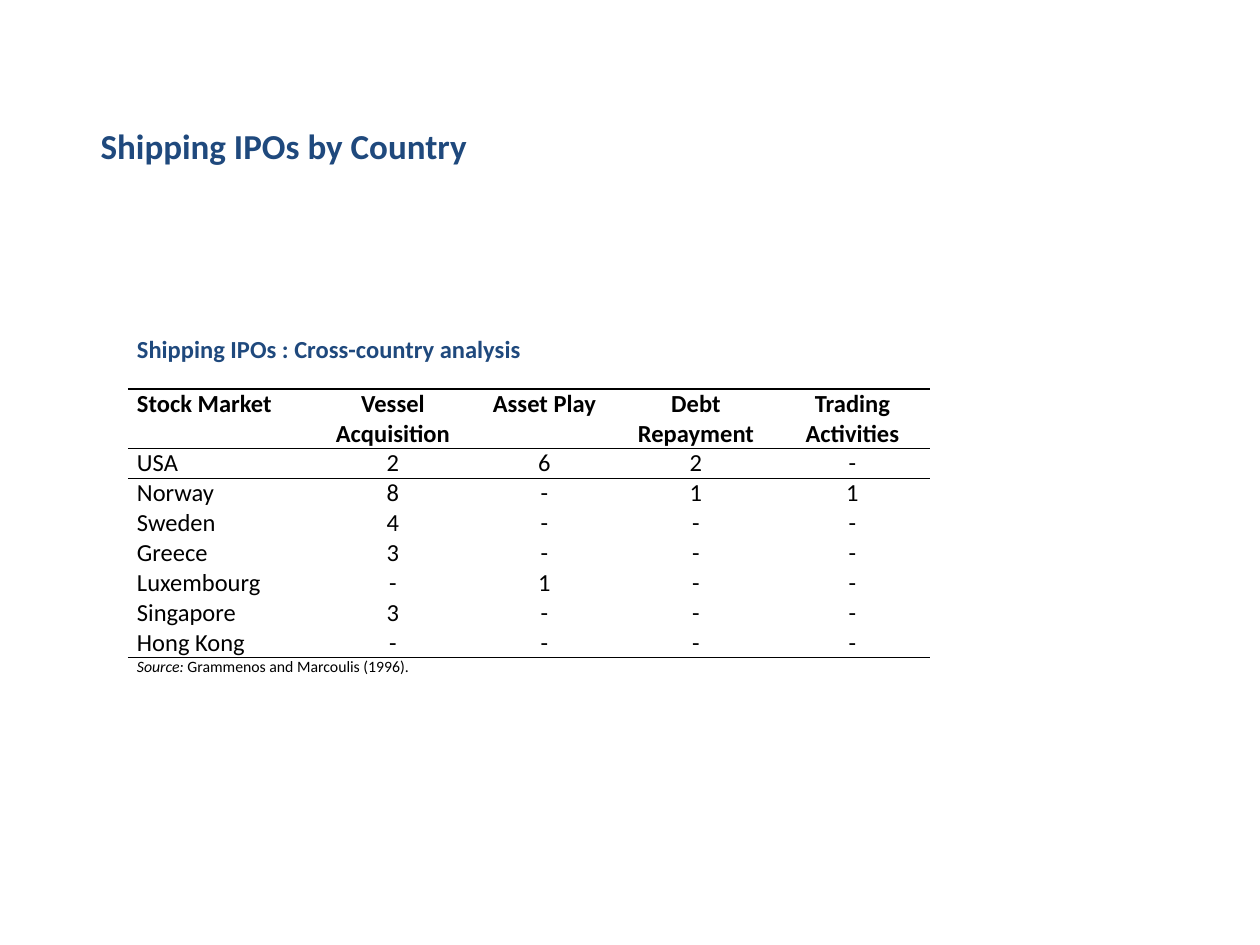
from lxml.etree import SubElement
from pptx import Presentation
from pptx.dml.color import RGBColor
from pptx.enum.text import MSO_ANCHOR, PP_ALIGN as Align
from pptx.oxml.ns import qn
from pptx.util import Pt

EMU_PER_PX = 914400 / 126
FONT = "Calibri"
COLORS = {"navy": "1F497D", "black": "000000"}
NO_STYLE = "{2D5ABB26-0587-4C30-8999-92F81FD0307C}"

TITLE = "Shipping IPOs by Country"
CAPTION = "Shipping IPOs : Cross-country analysis"
HEADERS = ["Stock Market", "Vessel\nAcquisition", "Asset Play", "Debt Repayment", "Trading Activities"]
MARKETS = [
    ["USA", "2", "6", "2", "-"],
    ["Norway", "8", "-", "1", "1"],
    ["Sweden", "4", "-", "-", "-"],
    ["Greece", "3", "-", "-", "-"],
    ["Luxembourg", "-", "1", "-", "-"],
    ["Singapore", "3", "-", "-", "-"],
    ["Hong Kong", "-", "-", "-", "-"],
]
SOURCE = ["Source: ", "Grammenos and Marcoulis (1996)."]
COLUMN_WIDTHS = [186, 158, 145, 158, 155]
ROW_HEIGHTS = [54, 47] + [24] * len(MARKETS) + [21]


def px(length):
    return round(length * EMU_PER_PX)


def format_text(text_frame, size, color="black", bold=False, align=Align.LEFT):
    for paragraph in text_frame.paragraphs:
        paragraph.alignment = align
        font = paragraph.font
        font.name, font.size, font.bold = FONT, Pt(size), bold
        font.color.rgb = RGBColor.from_string(COLORS[color])


def add_title(slide, left, top, width, height):
    title = slide.shapes.title
    title.left, title.top, title.width, title.height = map(px, (left, top, width, height))
    title.text_frame.text = TITLE
    title.text_frame.vertical_anchor = MSO_ANCHOR.TOP
    format_text(title.text_frame, 20, "navy", True)


def add_rule(cell, edge):
    line = SubElement(cell._tc.get_or_add_tcPr(), qn(f"a:{edge}"), w=str(Pt(1)))
    fill = SubElement(line, qn("a:solidFill"))
    SubElement(fill, qn("a:srgbClr"), val=COLORS["black"])


def format_cell(cell, row, rules_below):
    cell.margin_left = cell.margin_right = px(9)
    cell.margin_top = cell.margin_bottom = 0
    if row - 1 in rules_below:
        add_rule(cell, "lnT")
    if row in rules_below:
        add_rule(cell, "lnB")
    cell.fill.background()


def add_ipo_table(slide, left, top):
    width, height = sum(COLUMN_WIDTHS), sum(ROW_HEIGHTS)
    frame = slide.shapes.add_table(len(ROW_HEIGHTS), len(COLUMN_WIDTHS), *map(px, (left, top, width, height)))
    table = frame.table
    table.first_row = table.horz_banding = False
    frame.element.xpath(".//a:tableStyleId")[0].text = NO_STYLE
    for column, column_width in zip(table.columns, COLUMN_WIDTHS):
        column.width = px(column_width)
    for row, row_height in zip(table.rows, ROW_HEIGHTS):
        row.height = px(row_height)

    last = len(ROW_HEIGHTS) - 1
    for row in range(last + 1):
        for column in range(len(COLUMN_WIDTHS)):
            format_cell(table.cell(row, column), row, (0, 1, last - 1))
    for row in (0, last):
        table.cell(row, 0).merge(table.cell(row, len(COLUMN_WIDTHS) - 1))

    caption = table.cell(0, 0).text_frame
    caption.text = CAPTION
    format_text(caption, 14, "navy", True)

    for row, values in enumerate([HEADERS] + MARKETS, start=1):
        is_header = row == 1
        for column, value in enumerate(values):
            text_frame = table.cell(row, column).text_frame
            text_frame.text = value
            first_align = Align.LEFT if is_header else Align.JUSTIFY
            format_text(text_frame, 14, bold=is_header, align=Align.CENTER if column else first_align)

    source = table.cell(last, 0).text_frame
    for text, italic in zip(SOURCE, (True, False)):
        run = source.paragraphs[0].add_run()
        run.text, run.font.italic = text, italic
    format_text(source, 9)


def main():
    presentation = Presentation()
    presentation.slide_width, presentation.slide_height = px(1260), px(945)
    slide = presentation.slides.add_slide(presentation.slide_layouts[5])
    add_ipo_table(slide, 128, 335)
    add_title(slide, 88, 118, 1082, 98)
    presentation.save("out.pptx")


if __name__ == "__main__":
    main()
